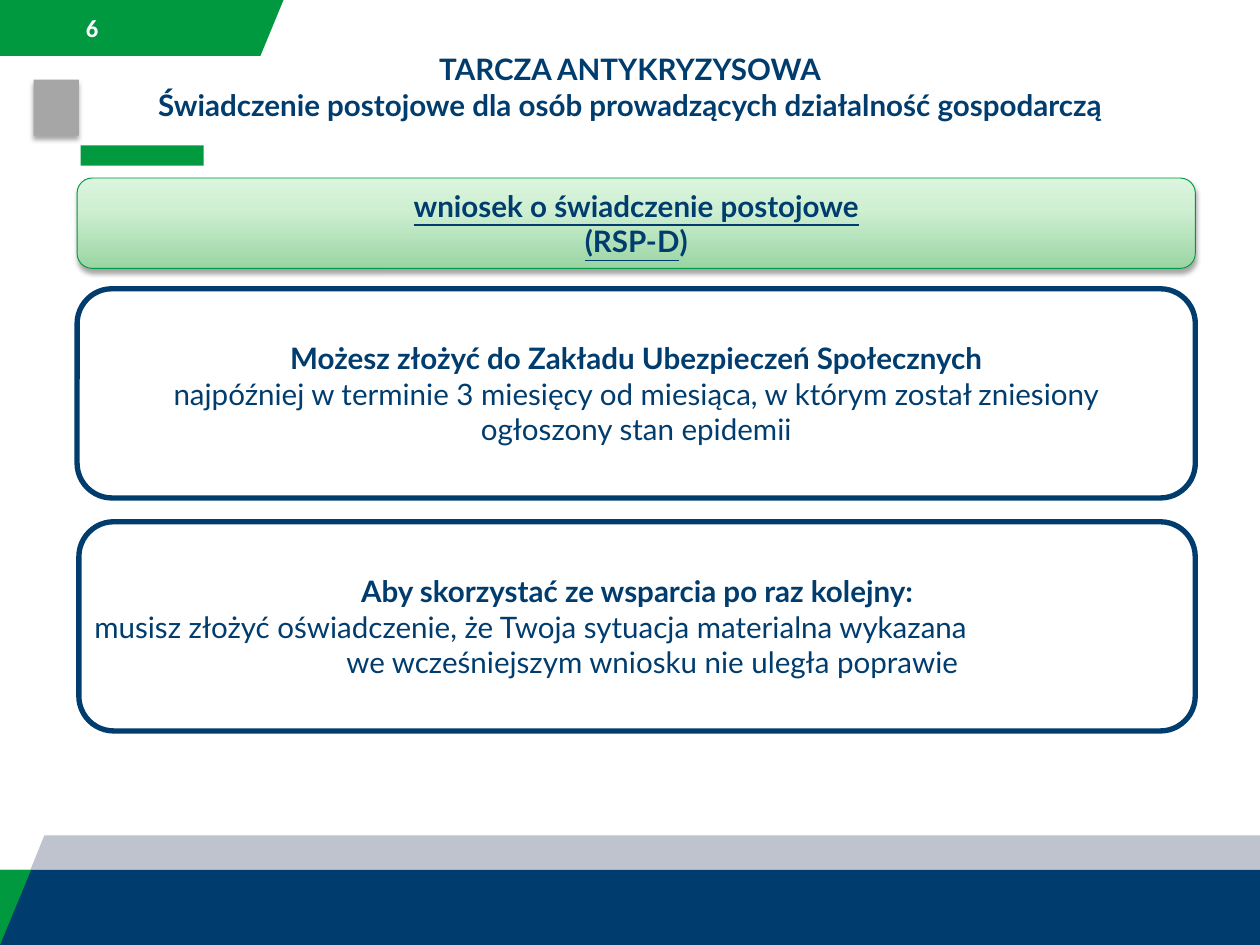
from copy import deepcopy

from lxml import etree
from pptx import Presentation
from pptx.dml.color import RGBColor
from pptx.enum.shapes import MSO_SHAPE
from pptx.enum.text import MSO_ANCHOR, PP_ALIGN
from pptx.oxml.ns import qn
from pptx.util import Inches, Pt

RECT, ROUND = MSO_SHAPE.RECTANGLE, MSO_SHAPE.ROUNDED_RECTANGLE
TOP, MIDDLE = MSO_ANCHOR.TOP, MSO_ANCHOR.MIDDLE
LEFT, CENTER = PP_ALIGN.LEFT, PP_ALIGN.CENTER

WIDE, HIGH = 14.22, 10.67
COLS, ROWS = 100, 75
GREEN, NAVY, WHITE = "00993F", "003D6E", "FFFFFF"


def rgb(code):
    return RGBColor.from_string(code)


def write(frame, lines, size=24, font="Lato", color=NAVY, align=CENTER,
          anchor=MIDDLE, pad=0.06):
    """Each line is a list of (text, bold, underline) runs."""
    frame.word_wrap = True
    frame.vertical_anchor = anchor
    frame.margin_left = frame.margin_right = Inches(pad)
    frame.margin_top = frame.margin_bottom = Inches(pad)
    for i, runs in enumerate(lines):
        para = frame.add_paragraph() if i else frame.paragraphs[0]
        para.alignment = align
        for text, bold, under in runs:
            for j, part in enumerate(text.split("\n")):
                if j:
                    para.add_line_break()
                run = para.add_run()
                run.text = part
                run.font.size, run.font.name = Pt(size), font
                run.font.bold = bold
                run.font.underline = under or None
                run.font.color.rgb = rgb(color)


class Deck:
    def __init__(self):
        self.prs = Presentation()
        self.prs.slide_width = Inches(WIDE)
        self.prs.slide_height = Inches(HIGH)
        self.slide = self.prs.slides.add_slide(self.prs.slide_layouts[6])
        self.shapes = self.slide.shapes

    def x(self, cols):
        return Inches(WIDE * cols / COLS)

    def y(self, rows):
        return Inches(HIGH * rows / ROWS)

    def place(self, col, row, wide, high):
        return self.x(col), self.y(row), self.x(wide), self.y(high)

    def paint(self, shape, fill, line=None, width=0):
        shape.shadow.inherit = False
        if fill:
            shape.fill.solid()
            shape.fill.fore_color.rgb = rgb(fill)
        if line:
            shape.line.color.rgb = rgb(line)
            shape.line.width = Pt(width)
        else:
            shape.line.fill.background()
        return shape

    def block(self, spot, fill, kind=RECT, line=None, width=0):
        shape = self.shapes.add_shape(kind, *self.place(*spot))
        return self.paint(shape, fill, line, width)

    def outline(self, points, fill):
        dots = [(self.x(c), self.y(r)) for c, r in points]
        build = self.shapes.build_freeform(*dots[0])
        build.add_line_segments(dots[1:], close=True)
        return self.paint(build.convert_to_shape(), fill)

    def label(self, spot, lines, **style):
        box = self.shapes.add_textbox(*self.place(*spot))
        write(box.text_frame, lines, **style)

    def panel(self, spot, lines, **style):
        box = self.block(spot, WHITE, ROUND, NAVY, 4.33)
        write(box.text_frame, lines, **style)
        return box

    def blend(self, shape, stops):
        shape.fill.gradient()
        shape.fill.gradient_angle = 90
        group = shape._element.spPr.find(qn("a:gradFill")).find(qn("a:gsLst"))
        while len(group) < len(stops):
            group.append(deepcopy(group[0]))
        for stop, (share, color) in zip(shape.fill.gradient_stops, stops):
            stop.position = share
            stop.color.rgb = rgb(color)

    def shade(self, shape):
        effects = shape._element.spPr.find(qn("a:effectLst"))
        drop = etree.SubElement(
            effects, qn("a:outerShdw"), blurRad=str(Pt(4)), dist=str(Pt(3)),
            dir="5400000", algn="ctr", rotWithShape="0")
        tint = etree.SubElement(drop, qn("a:srgbClr"), val="000000")
        etree.SubElement(tint, qn("a:alpha"), val="35000")


def main():
    deck = Deck()

    # Header flag and footer bands
    deck.outline([(0, 0), (22.5, 0), (20.67, 4.43), (0, 4.43)], GREEN)
    deck.outline([(0, ROWS), (3.52, 66.3), (COLS, 66.3), (COLS, ROWS)], "BEC3CE")
    foot = 69.05
    deck.block((0, foot, COLS, ROWS - foot), NAVY)
    deck.outline([(0, foot), (0, ROWS), (2.46, foot)], GREEN)

    # Accent bar, page number and grey square
    deck.block((6.4, 11.53, 9.77, 1.62), "029A3F")
    deck.label((6.4, 0.63, 5.98, 3.16), [[("6", True, False)]],
               size=20, font="Calibri", color=WHITE, align=LEFT)
    deck.shade(deck.block((2.67, 6.33, 3.59, 4.43), "A6A6A6"))

    # Title
    deck.label((5.7, 3.73, 88.6, 9.42), [
        [("TARCZA ANTYKRYZYSOWA", True, False)],
        [("Świadczenie postojowe dla osób prowadzących działalność gospodarczą",
          True, False)],
    ], anchor=TOP, pad=0.05)

    # Green heading box
    head = deck.block((6.12, 14.13, 88.75, 7.17), None, ROUND, GREEN, 0.75)
    deck.blend(head, [(0, "9AD5A3"), (0.65, "CEEFD2"), (1, "DBF5DE")])
    deck.shade(head)
    write(head.text_frame, [
        [("wniosek o świadczenie postojowe", True, True)],
        [("(RSP-D", True, True), (")", True, False)],
    ])

    # Framed panels
    deck.panel((6.12, 22.92, 88.75, 16.6), [
        [("Możesz złożyć do Zakładu Ubezpieczeń Społecznych", True, False)],
        [("najpóźniej w terminie 3 miesięcy od miesiąca, w którym został "
          "zniesiony", False, False)],
        [("ogłoszony stan epidemii", False, False)],
    ])
    again = deck.panel((6.26, 41.41, 88.6, 16.6), [
        [("Aby skorzystać ze wsparcia po raz kolejny:", True, False)],
        [("musisz złożyć oświadczenie, że Twoja sytuacja materialna wykazana\n"
          "we wcześniejszym wniosku nie uległa poprawie", False, False)],
    ])

    # Hanging indent sets the second line of the condition to the right
    terms = again.text_frame.paragraphs[1]
    terms.alignment = LEFT
    props = terms._p.get_or_add_pPr()
    props.set("marL", str(deck.x(20)))
    props.set("indent", str(-deck.x(20)))

    deck.prs.save("out.pptx")


if __name__ == "__main__":
    main()
